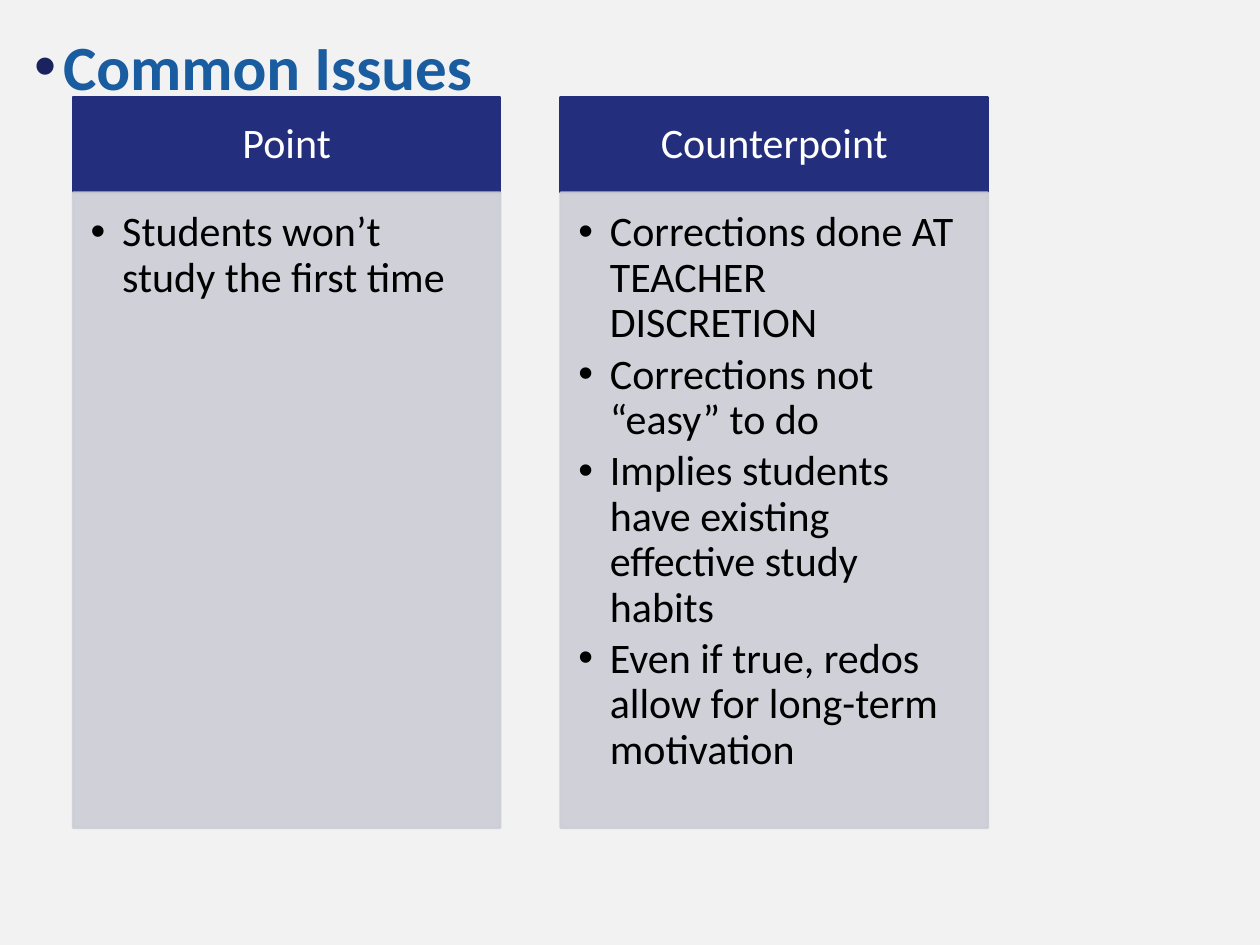
from lxml import etree
from pptx import Presentation
from pptx import util as u
from pptx.dml.color import RGBColor
from pptx.enum import shapes, text
from pptx.oxml.ns import qn

COLOURS = {
    "page": "F2F2F2",
    "title": "1A5CA0",
    "title_bullet": "1A235D",
    "header": "232F7C",
    "header_text": "FFFFFF",
    "body": "CDCDD7",
    "body_text": "000000",
}
WIDTH, HEIGHT = 10, 7.5
COLUMN_WIDTH, COLUMN_STEP = 3.39, 3.87
HEADER_HEIGHT, BODY_HEIGHT = 0.76, 5.04
COLUMNS = [
    ("Point", ["Students won’t study the first time"]),
    ("Counterpoint", [
        "Corrections done AT TEACHER DISCRETION",
        "Corrections not “easy” to do",
        "Implies students have existing effective study habits",
        "Even if true, redos allow for long-term motivation",
    ]),
]


def colour(name):
    return RGBColor.from_string(COLOURS[name])


def set_all(target, values):
    for name, value in values.items():
        setattr(target, name, value)


def set_frame(frame, anchor, insets):
    sides = ("margin_left", "margin_top", "margin_right", "margin_bottom")
    set_all(frame, {side: u.Inches(inset) for side, inset in zip(sides, insets)})
    set_all(frame, {"word_wrap": True, "vertical_anchor": anchor,
                    "auto_size": text.MSO_AUTO_SIZE.NONE})


def add_bullet(para, indent, bullet_colour):
    properties = para._p.get_or_add_pPr()
    properties.set("marL", str(u.Inches(indent)))
    properties.set("indent", str(u.Inches(-indent)))
    holder = etree.SubElement(properties, qn("a:buClr"))
    etree.SubElement(holder, qn("a:srgbClr"), val=COLOURS[bullet_colour])
    etree.SubElement(properties, qn("a:buFont"), typeface="Arial")
    etree.SubElement(properties, qn("a:buChar"), char="•")


def write(para, words, size, text_colour, bold=False, **layout):
    set_all(para, layout)
    span = para.add_run()
    span.text = words
    set_all(span.font, {"name": "Calibri", "size": u.Pt(size), "bold": bold})
    span.font.color.rgb = colour(text_colour)


def add_panel(page, box, fill, opacity=100):
    panel = page.shapes.add_shape(shapes.MSO_SHAPE.RECTANGLE, *map(u.Inches, box))
    panel.shadow.inherit = False
    panel.line.width = u.Pt(1.5)
    for paint in (panel.fill, panel.line.fill):
        paint.solid()
        paint.fore_color.rgb = colour(fill)
    if opacity < 100:
        for tint in panel._element.spPr.iter(qn("a:srgbClr")):
            etree.SubElement(tint, qn("a:alpha"), val=str(opacity * 1000))
    return panel.text_frame


def place_title(page, box, words):
    title = page.shapes.title
    set_all(title, dict(zip(("left", "top", "width", "height"), map(u.Inches, box))))
    set_frame(title.text_frame, text.MSO_ANCHOR.MIDDLE, (0.1, 0.05, 0.1, 0.05))
    para = title.text_frame.paragraphs[0]
    add_bullet(para, 0.23, "title_bullet")
    write(para, words, 36, "title", bold=True, alignment=text.PP_ALIGN.LEFT)


def place_column(page, box, heading, items):
    left, top, width, height = box
    header = add_panel(page, (left, top, width, HEADER_HEIGHT), "header")
    set_frame(header, text.MSO_ANCHOR.MIDDLE, (0.19, 0.11, 0.19, 0.11))
    write(header.paragraphs[0], heading, 24, "header_text",
          alignment=text.PP_ALIGN.CENTER, line_spacing=0.9)

    body = add_panel(page, (left, top + HEADER_HEIGHT, width, height - HEADER_HEIGHT),
                     "body", opacity=90)
    set_frame(body, text.MSO_ANCHOR.TOP, (0.14, 0.14, 0.19, 0.21))
    for index, item in enumerate(items):
        para = body.add_paragraph() if index else body.paragraphs[0]
        add_bullet(para, 0.25, "body_text")
        write(para, item, 24, "body_text", alignment=text.PP_ALIGN.LEFT,
              line_spacing=0.9, space_after=u.Pt(3.6))


def main():
    deck = Presentation()
    set_all(deck, {"slide_width": u.Inches(WIDTH), "slide_height": u.Inches(HEIGHT)})
    page = deck.slides.add_slide(deck.slide_layouts[5])
    page.background.fill.solid()
    page.background.fill.fore_color.rgb = colour("page")
    place_title(page, (0.17, 0.17, 0.9 * WIDTH, 0.7), "Common Issues")
    for index, (heading, items) in enumerate(COLUMNS):
        box = (0.58 + index * COLUMN_STEP, 0.77, COLUMN_WIDTH, HEADER_HEIGHT + BODY_HEIGHT)
        place_column(page, box, heading, items)
    deck.save("out.pptx")


if __name__ == "__main__":
    main()
